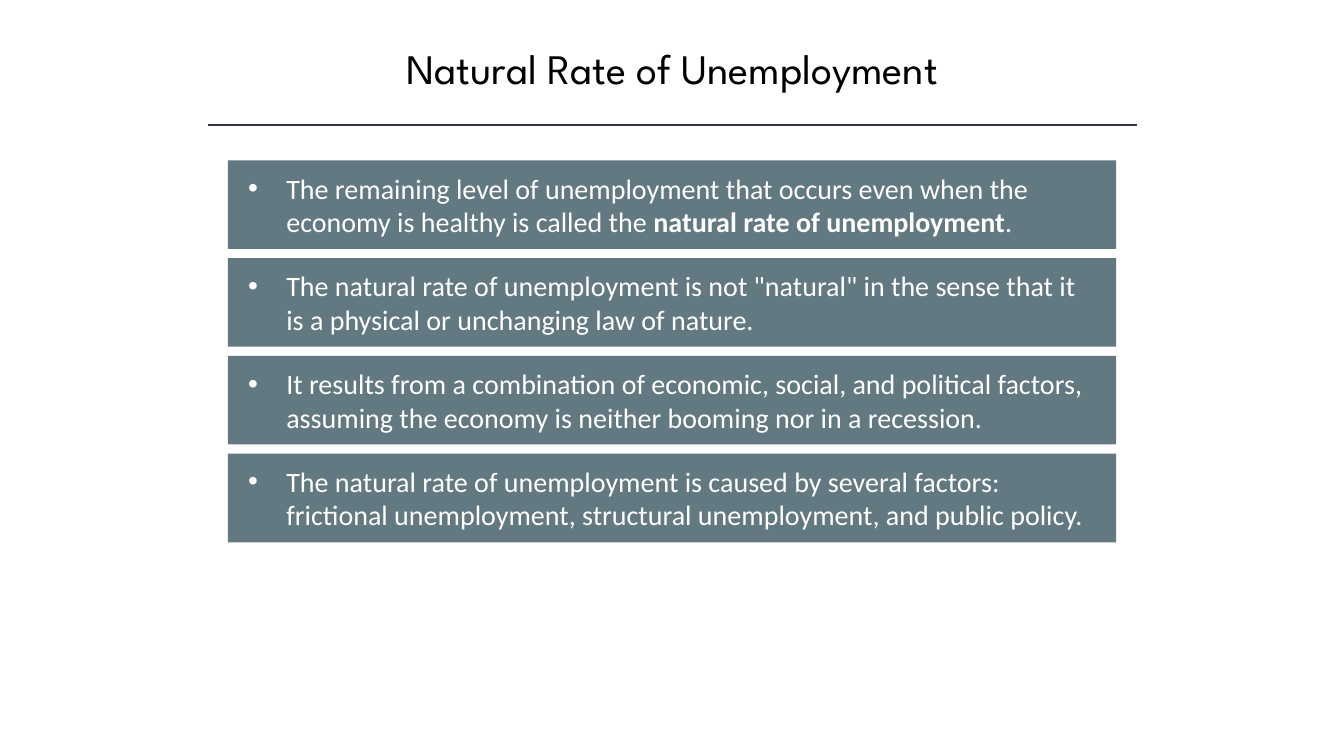
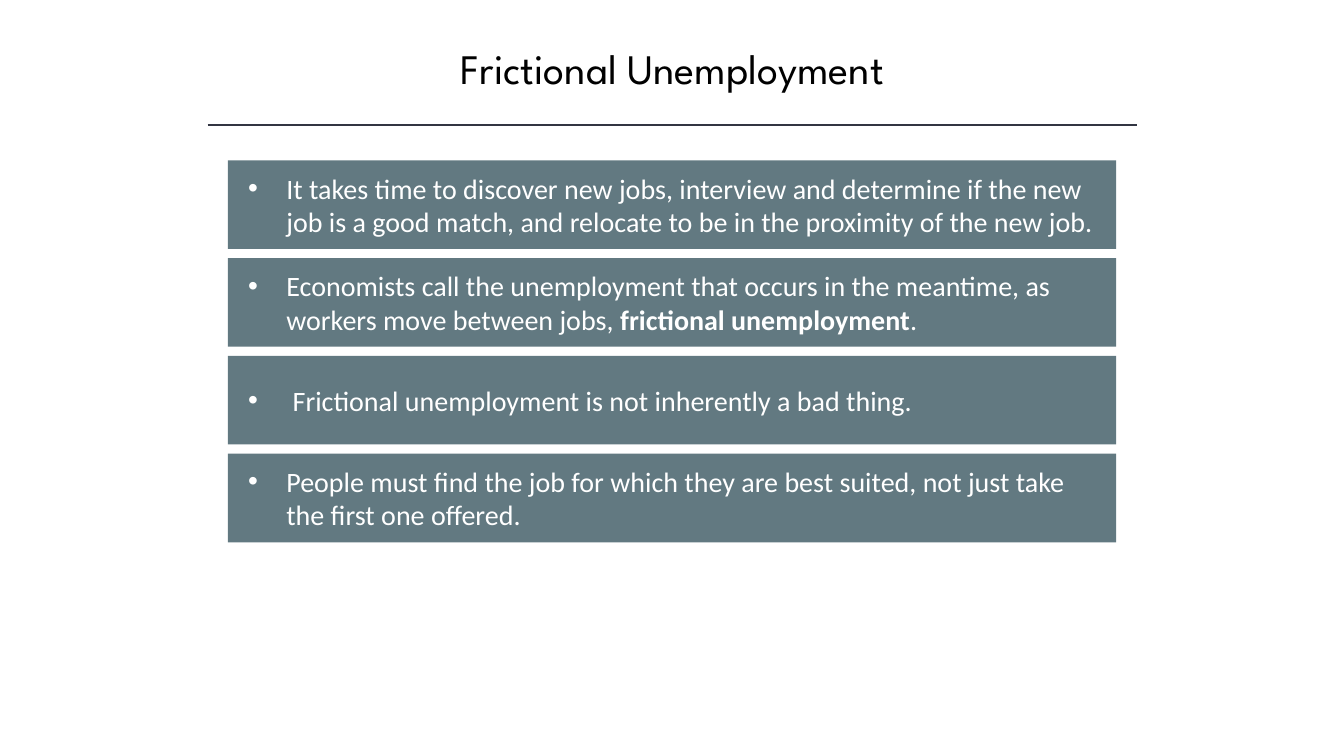
from lxml import etree
from pptx import Presentation
from pptx.dml.color import RGBColor
from pptx.enum.shapes import MSO_CONNECTOR, MSO_SHAPE
from pptx.enum.text import MSO_ANCHOR, MSO_AUTO_SIZE, PP_ALIGN
from pptx.oxml.ns import qn
from pptx.util import Emu, Pt

RECTANGLE = MSO_SHAPE.RECTANGLE
STRAIGHT = MSO_CONNECTOR.STRAIGHT
MIDDLE = MSO_ANCHOR.MIDDLE
NO_AUTOFIT = MSO_AUTO_SIZE.NONE
CENTER, LEFT = PP_ALIGN.CENTER, PP_ALIGN.LEFT

COLORS = {"title": "000000", "rule": "323542", "card": "627981", "card_text": "FFFFFF"}
TITLE_FONT, BODY_FONT = "League Spartan", "Calibri"
TITLE_LAYOUT = 5

# Card grid, in px (100 px to the inch)
CARD_LEFT, CARD_TOP, CARD_WIDTH, CARD_HEIGHT = 226, 159, 881, 88
CARD_PITCH = 97
TEXT_INSET_LEFT, BULLET_INDENT = 20, 38
FIRST_INSET_RIGHT, INSET_RIGHT = 10, 27

# Each card is a list of text pieces; every second piece is bold
SLIDES = [
    ("Natural Rate of Unemployment", [
        ["The remaining level of unemployment that occurs even when the economy is healthy "
         "is called the ", "natural rate of unemployment", "."],
        ["The natural rate of unemployment is not \"natural\" in the sense that it is a "
         "physical or unchanging law of nature."],
        ["It results from a combination of economic, social, and political factors, assuming "
         "the economy is neither booming nor in a recession."],
        ["The natural rate of unemployment is caused by several factors: frictional "
         "unemployment, structural unemployment, and public policy."],
    ]),
    ("Frictional Unemployment", [
        ["It takes time to discover new jobs, interview and determine if the new job is a "
         "good match, and relocate to be in the proximity of the new job."],
        ["Economists call the unemployment that occurs in the meantime, as workers move "
         "between jobs, ", "frictional unemployment", "."],
        [" Frictional unemployment is not inherently a bad thing."],
        ["People must find the job for which they are best suited, not just take the first "
         "one offered."],
    ]),
]


def px(length):
    return Emu(length * 9144)


def style_font(font, name, size, color):
    font.name = name
    font.size = Pt(size)
    font.color.rgb = RGBColor.from_string(COLORS[color])


presentation = Presentation()
presentation.slide_width, presentation.slide_height = px(1333), px(750)

for title_text, cards in SLIDES:
    slide = presentation.slides.add_slide(presentation.slide_layouts[TITLE_LAYOUT])

    # Title
    title = slide.shapes.title
    title.left, title.top, title.width, title.height = px(167), px(37), px(1000), px(61)
    title.text_frame.text = title_text
    title.text_frame.auto_size = NO_AUTOFIT
    title.text_frame.vertical_anchor = MIDDLE
    paragraph = title.text_frame.paragraphs[0]
    paragraph.alignment = CENTER
    style_font(paragraph.runs[0].font, TITLE_FONT, 30, "title")

    # Rule under the title
    rule = slide.shapes.add_connector(STRAIGHT, px(206), px(124), px(1128), px(124))
    rule.line.color.rgb = RGBColor.from_string(COLORS["rule"])
    rule.line.width = Pt(1)
    etree.SubElement(rule._element.spPr, qn("a:effectLst"))

    # Bulleted cards
    for index, pieces in enumerate(cards):
        card = slide.shapes.add_shape(RECTANGLE, px(CARD_LEFT), px(CARD_TOP + index * CARD_PITCH),
                                      px(CARD_WIDTH), px(CARD_HEIGHT))
        card.shadow.inherit = False
        card.fill.solid()
        card.fill.fore_color.rgb = RGBColor.from_string(COLORS["card"])
        card.line.fill.background()

        text_frame = card.text_frame
        text_frame.word_wrap = True
        text_frame.vertical_anchor = MIDDLE
        text_frame.margin_left = px(TEXT_INSET_LEFT)
        text_frame.margin_right = px(INSET_RIGHT if index else FIRST_INSET_RIGHT)

        paragraph = text_frame.paragraphs[0]
        paragraph.alignment = LEFT
        properties = paragraph._p.get_or_add_pPr()
        properties.set("marL", str(px(BULLET_INDENT)))
        properties.set("indent", str(px(-BULLET_INDENT)))
        etree.SubElement(properties, qn("a:buFont"), typeface="Arial")
        etree.SubElement(properties, qn("a:buChar"), char="•")

        for position, piece in enumerate(pieces):
            run = paragraph.add_run()
            run.text = piece
            style_font(run.font, BODY_FONT, 20, "card_text")
            run.font.bold = position % 2 == 1

presentation.save("out.pptx")
